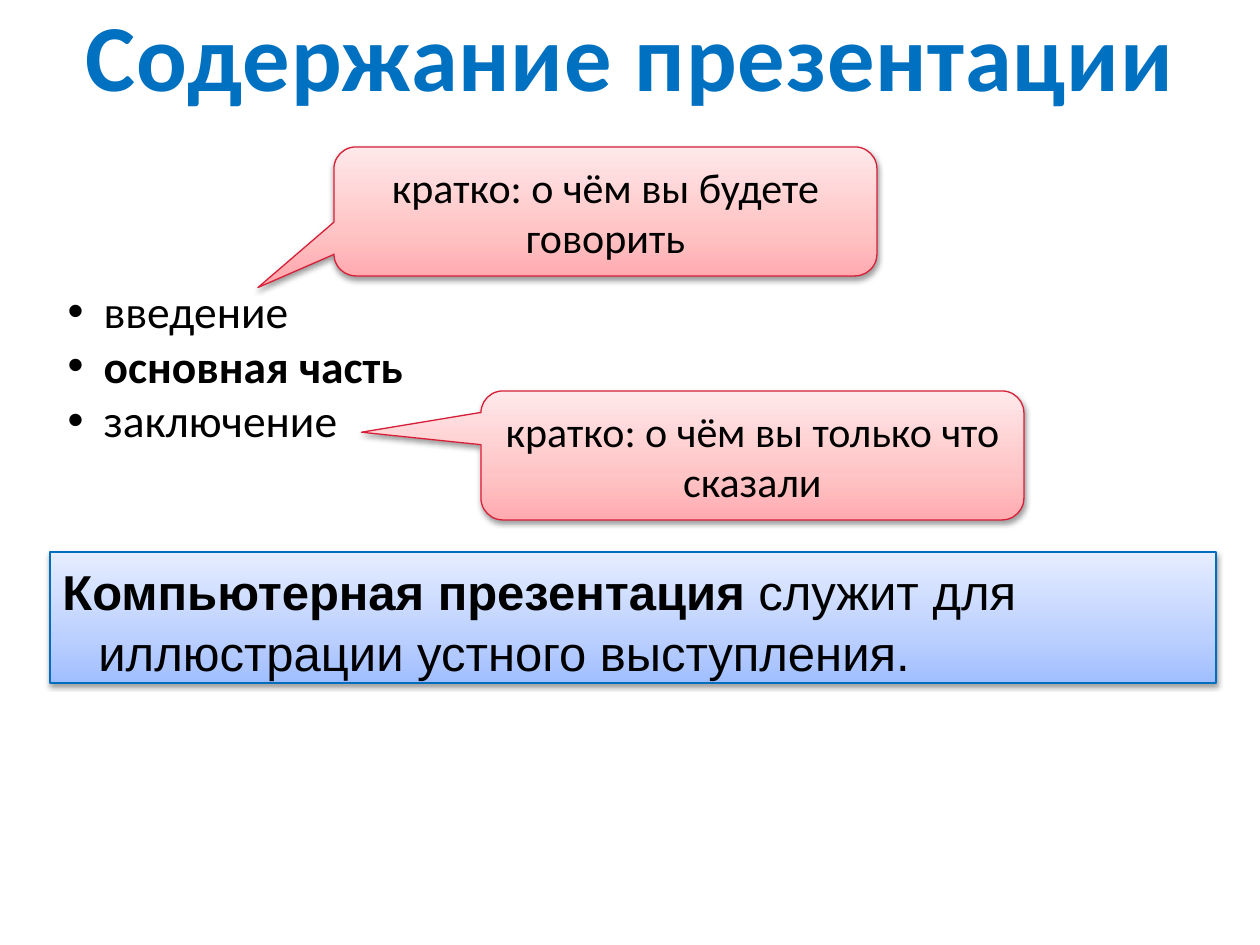
from dataclasses import dataclass

from pptx import Presentation
from pptx import oxml
from pptx.dml.color import RGBColor
from pptx.enum import shapes, text
from pptx.oxml import ns
from pptx.util import Emu, Pt


@dataclass(frozen=True)
class Theme:
    blue: str = "0070C0"
    ink: str = "000000"
    rose: tuple = ("FFABAF", "FFC4C6", "FFE8E9")
    rim: str = "D81F38"
    sky: tuple = ("A0BEFF", "BCD0FF", "E5EDFF")
    edge: str = "006EBC"
    head: int = 54
    note: int = 24
    list: int = 26
    sum: int = 28
    sans: str = "Calibri"
    plain: str = "Arial"


T = Theme()
SCALE = 914400 / 126


def px(n):
    return Emu(round(n * SCALE))


def place(shape, box):
    shape.left, shape.top, shape.width, shape.height = map(px, box)


def write(frame, lines, size, font=T.sans, color=T.ink, align=None,
          anchor=text.MSO_ANCHOR.TOP, wrap=True, hang=0, gap=1.0, track=0):
    frame.word_wrap = wrap
    frame.auto_size = text.MSO_AUTO_SIZE.NONE
    frame.vertical_anchor = anchor
    for i, line in enumerate(lines):
        para = frame.add_paragraph() if i else frame.paragraphs[0]
        para.alignment = align
        para.line_spacing = gap
        para.space_before = Pt(0)
        if hang:
            props = para._p.get_or_add_pPr()
            props.set("marL", str(px(hang)))
            props.set("indent", str(-px(hang)))
        for words, bold in line:
            run = para.add_run()
            run.text = words
            run.font.size = Pt(size)
            run.font.name = font
            run.font.bold = bold
            run.font.color.rgb = RGBColor.from_string(color)
            if track:
                run._r.get_or_add_rPr().set("spc", str(track))


def shade(shape, tones, rim):
    shape.line.color.rgb = RGBColor.from_string(rim)
    shape.line.width = Pt(0.75)
    shape.shadow.inherit = False
    stops = "".join(
        f'<a:gs pos="{pos}"><a:srgbClr val="{tone}"/></a:gs>'
        for pos, tone in zip((0, 35000, 100000), tones))
    fill = oxml.parse_xml(
        f'<a:gradFill {ns.nsdecls("a")} rotWithShape="1"><a:gsLst>{stops}'
        '</a:gsLst><a:lin ang="16200000" scaled="1"/></a:gradFill>')
    cast = oxml.parse_xml(
        f'<a:outerShdw {ns.nsdecls("a")} blurRad="40000" dist="20000" '
        'dir="5400000" rotWithShape="0"><a:srgbClr val="000000">'
        '<a:alpha val="38000"/></a:srgbClr></a:outerShdw>')
    props = shape._element.spPr
    props.find(ns.qn("a:prstGeom")).addnext(fill)
    props.find(ns.qn("a:effectLst")).append(cast)


def title(slide, box):
    shape = slide.shapes.title
    place(shape, box)
    write(shape.text_frame, [[("Содержание презентации", True)]], T.head,
          color=T.blue, align=text.PP_ALIGN.CENTER,
          anchor=text.MSO_ANCHOR.MIDDLE, track=50)


def parts(slide, box):
    shape = slide.placeholders[1]
    place(shape, box)
    write(shape.text_frame,
          [[("введение", False)], [("основная часть", True)],
           [("заключение", False)]],
          T.list, wrap=False, hang=36)


def callout(slide, box, words, tip):
    shape = slide.shapes.add_shape(
        shapes.MSO_SHAPE.ROUNDED_RECTANGULAR_CALLOUT, *map(px, box))
    for i, val in enumerate((*tip, 0.17)):
        shape.adjustments[i] = val
    shade(shape, T.rose, T.rim)
    write(shape.text_frame, [[(words, False)]], T.note,
          align=text.PP_ALIGN.CENTER, anchor=text.MSO_ANCHOR.MIDDLE)


def banner(slide, box):
    shape = slide.shapes.add_shape(shapes.MSO_SHAPE.RECTANGLE, *map(px, box))
    shade(shape, T.sky, T.edge)
    write(shape.text_frame,
          [[("Компьютерная презентация ", True),
            ("служит для иллюстрации устного выступления.", False)]],
          T.sum, font=T.plain, align=text.PP_ALIGN.LEFT, hang=36, gap=1.05)


def main():
    deck = Presentation()
    deck.slide_width, deck.slide_height = px(1260), px(945)
    slide = deck.slides.add_slide(deck.slide_layouts[1])
    title(slide, (0, 0, 1260, 107))
    parts(slide, (55, 277, 422, 178))
    callout(slide, (334, 147, 543, 129),
            "кратко: о чём вы будете говорить", (-0.64, 0.59))
    callout(slide, (481, 391, 543, 129),
            "кратко: о чём вы только что сказали", (-0.72, -0.18))
    banner(slide, (50, 552, 1166, 131))
    deck.save("out.pptx")


if __name__ == "__main__":
    main()
